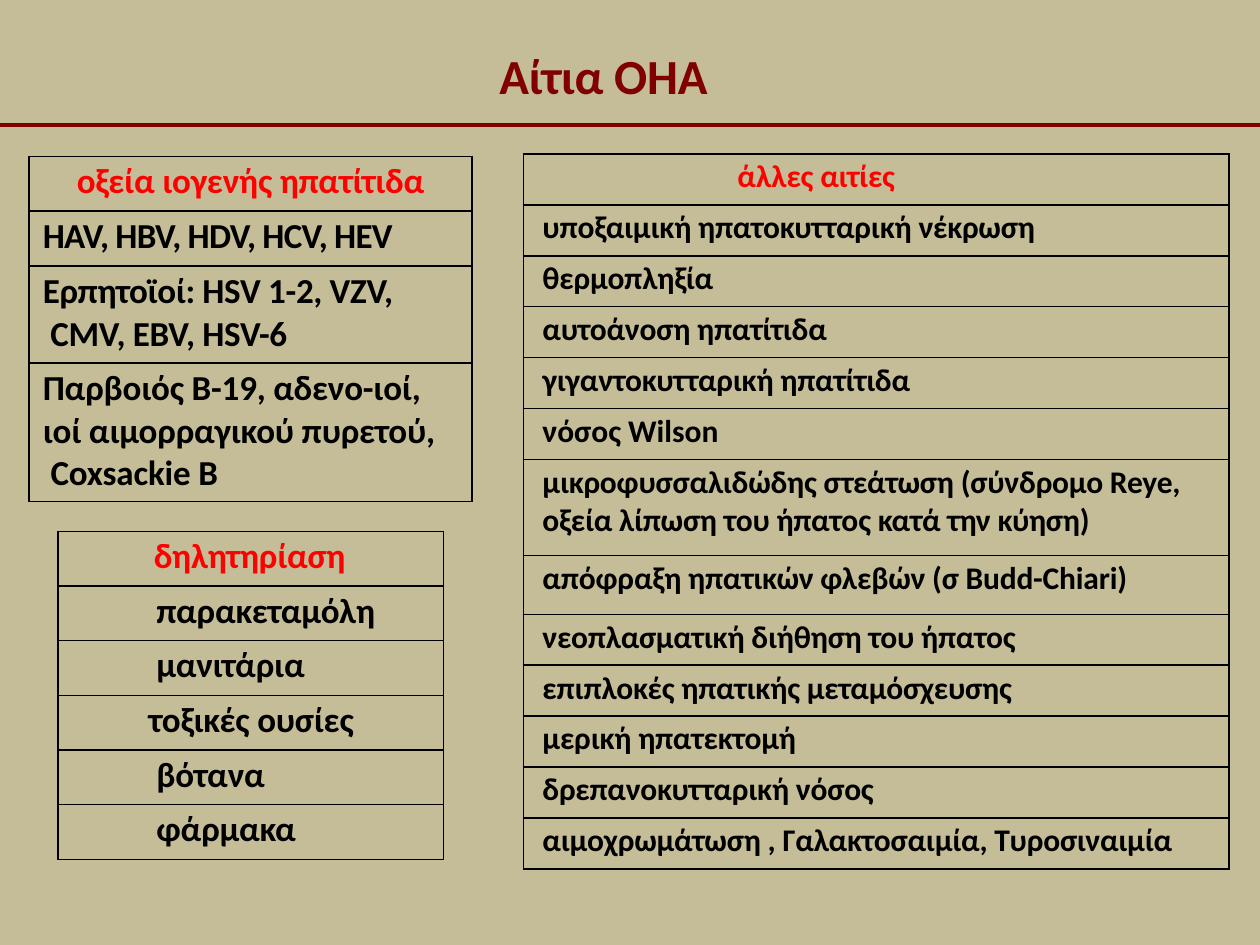
from dataclasses import dataclass

from lxml import etree
from pptx import Presentation
from pptx.dml.color import RGBColor
from pptx.enum.shapes import MSO_CONNECTOR
from pptx.enum.text import MSO_ANCHOR, MSO_AUTO_SIZE, PP_ALIGN
from pptx.oxml.ns import qn
from pptx.util import Pt

STRAIGHT = MSO_CONNECTOR.STRAIGHT
TOP = MSO_ANCHOR.TOP
NO_AUTOFIT = MSO_AUTO_SIZE.NONE
LEFT = PP_ALIGN.LEFT
TITLE_ONLY_LAYOUT = 5
SLIDE_WIDTH = 720
SLIDE_HEIGHT = 540


@dataclass(frozen=True)
class Theme:
    font: str = "Calibri"
    background: str = "C4BD97"
    title: str = "800000"
    heading: str = "FF0000"
    body: str = "000000"
    border: str = "010000"
    title_size: float = 28
    large_size: float = 20
    small_size: float = 18
    border_width: float = 1
    rule_width: float = 2.28


@dataclass(frozen=True)
class Row:
    text: str
    height: float
    indent: float
    spacing: float = -0.1


THEME = Theme()

VIRAL_HEPATITIS = [
    Row("οξεία ιογενής ηπατίτιδα", 31.4, 27.4),
    Row("HAV, HBV, HDV, HCV, HEV", 31.4, 8, -0.45),
    Row("Ερπητοϊοί: HSV 1-2, VZV,\v CMV, EBV, HSV-6", 55.4, 8, -0.2),
    Row("Παρβοιός B-19, αδενο-ιοί,\vιοί αιμορραγικού πυρετού,\v Coxsackie B", 79.2, 8),
]

OTHER_CAUSES = [
    Row("άλλες αιτίες", 29.1, 122.4),
    Row("υποξαιμική ηπατοκυτταρική νέκρωση", 29.1, 11),
    Row("θερμοπληξία", 29.1, 11),
    Row("αυτοάνοση ηπατίτιδα", 29.1, 11),
    Row("γιγαντοκυτταρική ηπατίτιδα", 29.1, 11),
    Row("νόσος Wilson", 29.1, 11, 0),
    Row("μικροφυσσαλιδώδης στεάτωση (σύνδρομο Reye,\v"
        "οξεία λίπωση του ήπατος κατά την κύηση)", 54.9, 11),
    Row("απόφραξη ηπατικών φλεβών (σ Budd-Chiari)", 33.7, 11),
    Row("νεοπλασματική διήθηση του ήπατος", 29.1, 11),
    Row("επιπλοκές ηπατικής μεταμόσχευσης", 29.1, 11),
    Row("μερική ηπατεκτομή", 29.1, 11),
    Row("δρεπανοκυτταρική νόσος", 29.1, 11),
    Row("αιμοχρωμάτωση , Γαλακτοσαιμία, Τυροσιναιμία", 29.1, 11),
]

POISONING = [
    Row("δηλητηρίαση", 31.25, 54.7),
    Row("παρακεταμόλη", 31.25, 56.2),
    Row("μανιτάρια", 31.25, 56.2),
    Row("τοξικές ουσίες", 31.25, 51.8),
    Row("βότανα", 31.25, 56.2),
    Row("φάρμακα", 31.25, 56.2),
]


def format_text(text_frame, size, color, spacing, space_before):
    for paragraph in text_frame.paragraphs:
        paragraph.alignment = LEFT
        paragraph.space_before = Pt(space_before)
        for run in paragraph.runs:
            run.font.name = THEME.font
            run.font.size = Pt(size)
            run.font.bold = True
            run.font.color.rgb = RGBColor.from_string(color)
            run._r.get_or_add_rPr().set("spc", str(round(spacing * 100)))


def add_borders(cell):
    properties = cell._tc.get_or_add_tcPr()
    for side in ("a:lnL", "a:lnR", "a:lnT", "a:lnB"):
        line = etree.SubElement(properties, qn(side), w=str(Pt(THEME.border_width)))
        fill = etree.SubElement(line, qn("a:solidFill"))
        etree.SubElement(fill, qn("a:srgbClr"), val=THEME.border)


def add_cause_table(slide, left, top, width, rows, size):
    height = sum(row.height for row in rows)
    frame = slide.shapes.add_table(len(rows), 1, Pt(left), Pt(top), Pt(width), Pt(height))
    table = frame.table
    table.first_row = False
    table.horz_banding = False
    for index, row in enumerate(rows):
        table.rows[index].height = Pt(row.height)
        cell = table.cell(index, 0)
        cell.margin_left = Pt(row.indent)
        cell.margin_top = Pt(2.16)
        cell.margin_right = cell.margin_bottom = 0
        cell.vertical_anchor = TOP
        add_borders(cell)
        cell.fill.background()
        cell.text_frame.text = row.text
        color = THEME.body if index else THEME.heading
        format_text(cell.text_frame, size, color, row.spacing, 2.4)


def set_title(slide, text):
    title = slide.shapes.title
    title.left, title.top = Pt(284.4), Pt(25.2)
    title.width, title.height = Pt(122), Pt(35.3)
    text_frame = title.text_frame
    text_frame.text = text
    text_frame.auto_size = NO_AUTOFIT
    text_frame.vertical_anchor = TOP
    text_frame.margin_left = text_frame.margin_top = Pt(0.9)
    text_frame.margin_right = text_frame.margin_bottom = 0
    format_text(text_frame, THEME.title_size, THEME.title, -0.1, 0.9)


def add_rule(slide, top):
    rule = slide.shapes.add_connector(STRAIGHT, 0, Pt(top), Pt(SLIDE_WIDTH), Pt(top))
    rule.line.color.rgb = RGBColor.from_string(THEME.title)
    rule.line.width = Pt(THEME.rule_width)
    etree.SubElement(rule._element.spPr, qn("a:effectLst"))


def main():
    presentation = Presentation()
    presentation.slide_width = Pt(SLIDE_WIDTH)
    presentation.slide_height = Pt(SLIDE_HEIGHT)
    slide = presentation.slides.add_slide(presentation.slide_layouts[TITLE_ONLY_LAYOUT])
    slide.background.fill.solid()
    slide.background.fill.fore_color.rgb = RGBColor.from_string(THEME.background)

    set_title(slide, "Αίτια ΟΗΑ")
    add_rule(slide, 71.3)
    add_cause_table(slide, 16.5, 89.3, 253.2, VIRAL_HEPATITIS, THEME.large_size)
    add_cause_table(slide, 299, 88, 403.2, OTHER_CAUSES, THEME.small_size)
    add_cause_table(slide, 33.2, 303.6, 220.3, POISONING, THEME.large_size)

    presentation.save("out.pptx")


if __name__ == "__main__":
    main()
